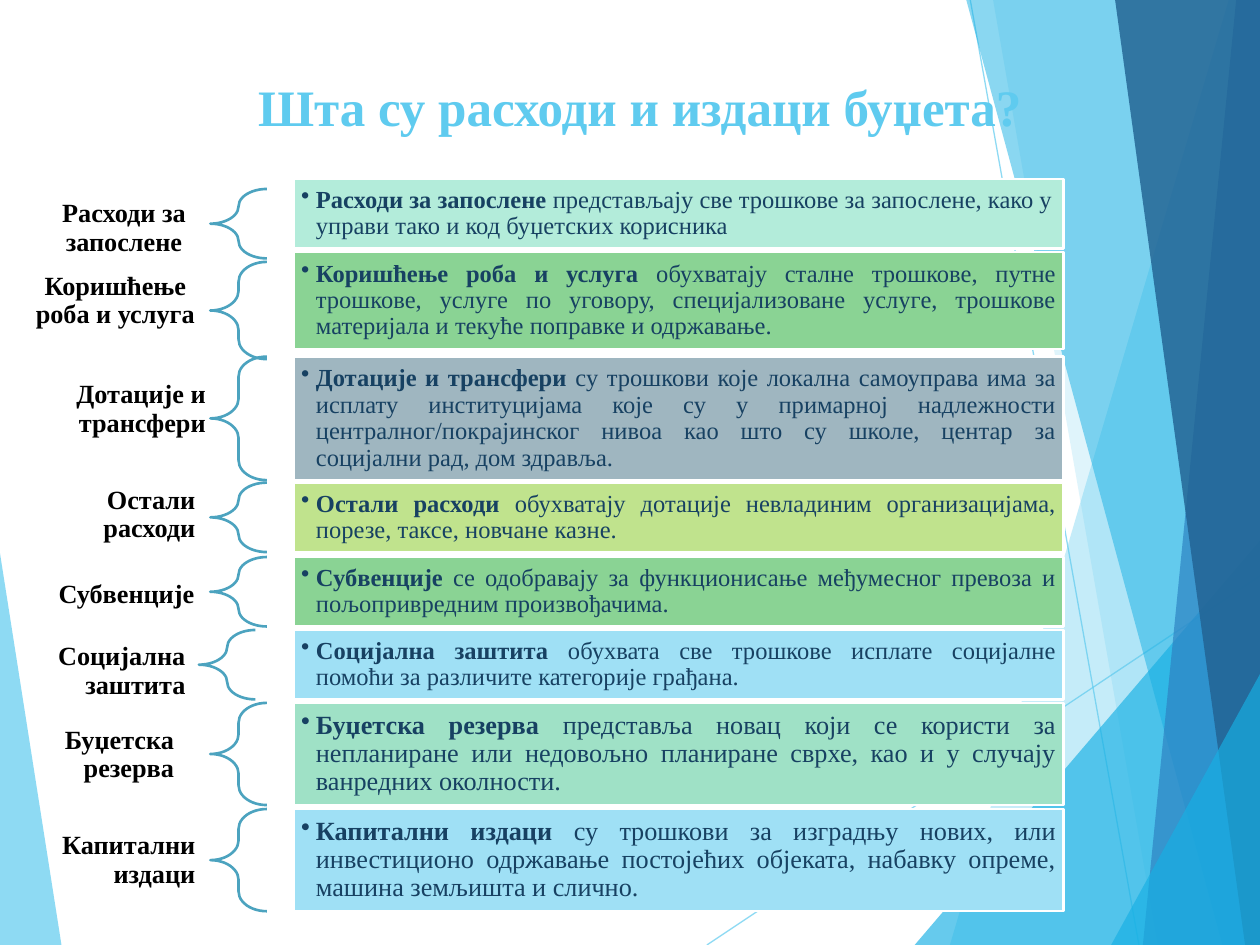
from dataclasses import dataclass
from typing import Any

from lxml import etree
from pptx import Presentation
from pptx.dml.color import RGBColor
from pptx.enum.shapes import MSO_CONNECTOR, MSO_SHAPE
from pptx.enum.text import MSO_ANCHOR, MSO_AUTO_SIZE, PP_ALIGN
from pptx.oxml.ns import qn
from pptx.util import Cm, Pt

LEFT, CENTER, RIGHT, JUSTIFY = PP_ALIGN.LEFT, PP_ALIGN.CENTER, PP_ALIGN.RIGHT, PP_ALIGN.JUSTIFY
MIDDLE = MSO_ANCHOR.MIDDLE
NO_AUTOFIT = MSO_AUTO_SIZE.NONE
RECTANGLE, LEFT_BRACE = MSO_SHAPE.RECTANGLE, MSO_SHAPE.LEFT_BRACE
STRAIGHT = MSO_CONNECTOR.STRAIGHT

WHITE = RGBColor(0xFF, 0xFF, 0xFF)
BLACK = RGBColor(0x00, 0x00, 0x00)
NAVY = RGBColor(0x17, 0x41, 0x62)
TEAL = RGBColor(0x4C, 0xA3, 0xBF)
SKY = RGBColor(0x5F, 0xCB, 0xEF)
CYAN = RGBColor(0x17, 0xB0, 0xE4)
BLUE = RGBColor(0x2E, 0x83, 0xC3)
DEEP_BLUE = RGBColor(0x22, 0x62, 0x92)
MINT = RGBColor(0xB3, 0xEC, 0xDA)
GREEN = RGBColor(0x8A, 0xD3, 0x94)
GREY = RGBColor(0x9F, 0xB6, 0xC0)
LIME = RGBColor(0xC0, 0xE3, 0x8D)
PALE_BLUE = RGBColor(0x9F, 0xE0, 0xF5)
SEA_GREEN = RGBColor(0x9F, 0xE1, 0xC6)

FONT = "Times New Roman"
WIDTH, HEIGHT = 25.4, 19.05
BOX_LEFT, BOX_WIDTH = 5.92, 15.52
BRACE_WIDTH = 1.14


@dataclass
class Facet:
    points: list[tuple[float, float]]
    color: RGBColor
    opacity: int


@dataclass
class Expense:
    name: str
    description: str
    top: float
    height: float
    fill: RGBColor
    label_area: tuple[float, float, float, float]
    label_alignment: Any = RIGHT
    alignment: Any = JUSTIFY
    size: int = 14
    brace_left: float = 4.24
    brace_offset: float = 0


FACETS = [
    Facet([(0, 11.15), (1.24, HEIGHT), (0, HEIGHT)], SKY, 70),
    Facet([(24.77, 0), (19.15, HEIGHT), (WIDTH, HEIGHT), (WIDTH, 0)], SKY, 36),
    Facet([(20.02, 0), (23.34, HEIGHT), (WIDTH, HEIGHT), (WIDTH, 0)], SKY, 20),
    Facet([(18.44, HEIGHT), (WIDTH, 10.9), (WIDTH, HEIGHT)], CYAN, 66),
    Facet([(19.48, 0), (24.64, HEIGHT), (WIDTH, HEIGHT), (WIDTH, 0)], CYAN, 50),
    Facet([(24.92, 0), (23.04, HEIGHT), (WIDTH, HEIGHT), (WIDTH, 0)], BLUE, 70),
    Facet([(22.48, 0), (25.1, HEIGHT), (WIDTH, HEIGHT), (WIDTH, 0)], DEEP_BLUE, 82),
    Facet([(22.4, HEIGHT), (WIDTH, 13.59), (WIDTH, HEIGHT)], CYAN, 66),
]
RAYS = [(14.25, HEIGHT, WIDTH, 11.61), (19.56, 0, 22.96, HEIGHT)]

EXPENSES = [
    Expense("Расходи за запослене",
            " представљају све трошкове за запослене, како у управи тако и код буџетских корисника",
            3.61, 1.4, MINT, (0.76, 4.34, 3.48, 0.53), CENTER, LEFT, brace_offset=0.2),
    Expense("Коришћење роба и услуга",
            " обухватају сталне трошкове, путне трошкове, услуге по уговору, специјализоване "
            "услуге, трошкове материјала и текуће поправке и одржавање.",
            5.08, 1.96, GREEN, (0, 5.46, 4.65, 1.22), CENTER, brace_offset=0.2),
    Expense("Дотације и трансфери",
            " су трошкови које локална самоуправа има за исплату институцијама које су у "
            "примарној надлежности централног/покрајинског нивоа као што су школе, центар "
            "за социјални рад, дом здравља.",
            7.19, 2.49, GREY, (0, 8.03, 4.45, 0.46)),
    Expense("Остали расходи",
            " обухватају дотације невладиним организацијама, порезе, таксе, новчане казне.",
            9.73, 1.4, LIME, (0, 9.96, 4.24, 0.84)),
    Expense("Субвенције",
            " сe одобравају за функционисање међумесног превоза и пољопривредним произвођачима.",
            11.23, 1.4, GREEN, (0.28, 11.71, 3.94, 0.56)),
    Expense("Социјална заштита",
            " обухвата све трошкове исплате социјалне помоћи за различите категорије грађана.",
            12.7, 1.4, PALE_BLUE, (0.15, 13.13, 3.89, 0.81), brace_left=4.01),
    Expense("Буџетска резерва",
            " представља новац који се користи за непланиране или недовољно планиране сврхе, "
            "као и у случају ванредних околности.",
            14.17, 2.06, SEA_GREEN, (0.13, 14.81, 3.68, 0.81), size=15),
    Expense("Капитални издаци",
            " су трошкови за изградњу нових, или инвестиционо одржавање постојећих објеката, "
            "набавку опреме, машина земљишта и слично.",
            16.31, 2.06, PALE_BLUE, (0.3, 16.94, 3.94, 0.81), size=15),
]


def apply_format(target: Any, values: dict[str, Any]) -> None:
    for name, value in values.items():
        setattr(target, name, value)


def set_opacity(fill_parent: Any, percent: int) -> None:
    color = fill_parent.find(".//" + qn("a:srgbClr"))
    etree.SubElement(color, qn("a:alpha"), val=str(percent * 1000))


def set_margins(frame: Any, horizontal: float, vertical: float) -> None:
    apply_format(frame, {
        "margin_left": Cm(horizontal), "margin_right": Cm(horizontal),
        "margin_top": Cm(vertical), "margin_bottom": Cm(vertical),
        "word_wrap": True, "vertical_anchor": MIDDLE, "auto_size": NO_AUTOFIT,
    })


def add_run(paragraph: Any, text: str, size: float, color: RGBColor, bold: bool) -> None:
    run = paragraph.add_run()
    run.text = text
    apply_format(run.font, {"name": FONT, "size": Pt(size), "bold": bold})
    run.font.color.rgb = color


def add_facet(slide: Any, facet: Facet) -> None:
    start, *others = [(Cm(x), Cm(y)) for x, y in facet.points]
    builder = slide.shapes.build_freeform(*start)
    builder.add_line_segments(others, close=True)
    shape = builder.convert_to_shape()
    shape.shadow.inherit = False
    shape.fill.solid()
    shape.fill.fore_color.rgb = facet.color
    shape.line.fill.background()
    set_opacity(shape._element.spPr, facet.opacity)


def add_ray(slide: Any, ends: tuple[float, float, float, float]) -> None:
    connector = slide.shapes.add_connector(STRAIGHT, *map(Cm, ends))
    connector.line.color.rgb = SKY
    connector.line.width = Pt(0.75)
    properties = connector._element.spPr
    set_opacity(properties, 70)
    etree.SubElement(properties, qn("a:effectLst"))


def add_text(slide: Any, area: tuple[float, float, float, float], text: str, size: float,
             color: RGBColor, alignment: Any, line_spacing: float) -> None:
    frame = slide.shapes.add_textbox(*map(Cm, area)).text_frame
    set_margins(frame, 0.3, 0.1)
    paragraph = frame.paragraphs[0]
    apply_format(paragraph, {"alignment": alignment, "line_spacing": line_spacing})
    add_run(paragraph, text, size, color, True)


def add_expense(slide: Any, expense: Expense) -> None:
    # Brace between label and description
    brace = slide.shapes.add_shape(
        LEFT_BRACE, Cm(expense.brace_left), Cm(expense.top + expense.brace_offset),
        Cm(BRACE_WIDTH), Cm(expense.height))
    brace.shadow.inherit = False
    brace.adjustments[0] = 0.35
    brace.fill.background()
    brace.line.color.rgb = TEAL
    brace.line.width = Pt(1.5)

    # Description box
    box = slide.shapes.add_shape(
        RECTANGLE, Cm(BOX_LEFT), Cm(expense.top), Cm(BOX_WIDTH), Cm(expense.height))
    box.shadow.inherit = False
    box.fill.solid()
    box.fill.fore_color.rgb = expense.fill
    box.line.color.rgb = WHITE
    box.line.width = Pt(1.5)
    set_margins(box.text_frame, 0.15, 0.15)
    paragraph = box.text_frame.paragraphs[0]
    apply_format(paragraph, {"alignment": expense.alignment, "level": 1,
                             "line_spacing": 0.9, "space_after": Pt(2)})
    properties = paragraph._p.get_or_add_pPr()
    properties.set("marL", str(Cm(0.3)))
    properties.set("indent", str(-Cm(0.3)))
    etree.SubElement(properties, qn("a:buChar"), char="•")
    add_run(paragraph, expense.name, expense.size, NAVY, True)
    add_run(paragraph, expense.description, expense.size, NAVY, False)

    # Label
    add_text(slide, expense.label_area, expense.name, 15, BLACK, expense.label_alignment, 0.9)


def main() -> None:
    presentation = Presentation()
    presentation.slide_width, presentation.slide_height = Cm(WIDTH), Cm(HEIGHT)
    slide = presentation.slides.add_slide(presentation.slide_layouts[6])

    # Background facets, with the thin rays above the left one
    add_facet(slide, FACETS[0])
    for ray in RAYS:
        add_ray(slide, ray)
    for facet in FACETS[1:]:
        add_facet(slide, facet)

    # Title and expense rows
    add_text(slide, (1.47, 1.27, 22.86, 1.73), "Шта су расходи и издаци буџета?",
             29.2, SKY, CENTER, 1.0)
    for expense in EXPENSES:
        add_expense(slide, expense)

    presentation.save("out.pptx")


if __name__ == "__main__":
    main()
